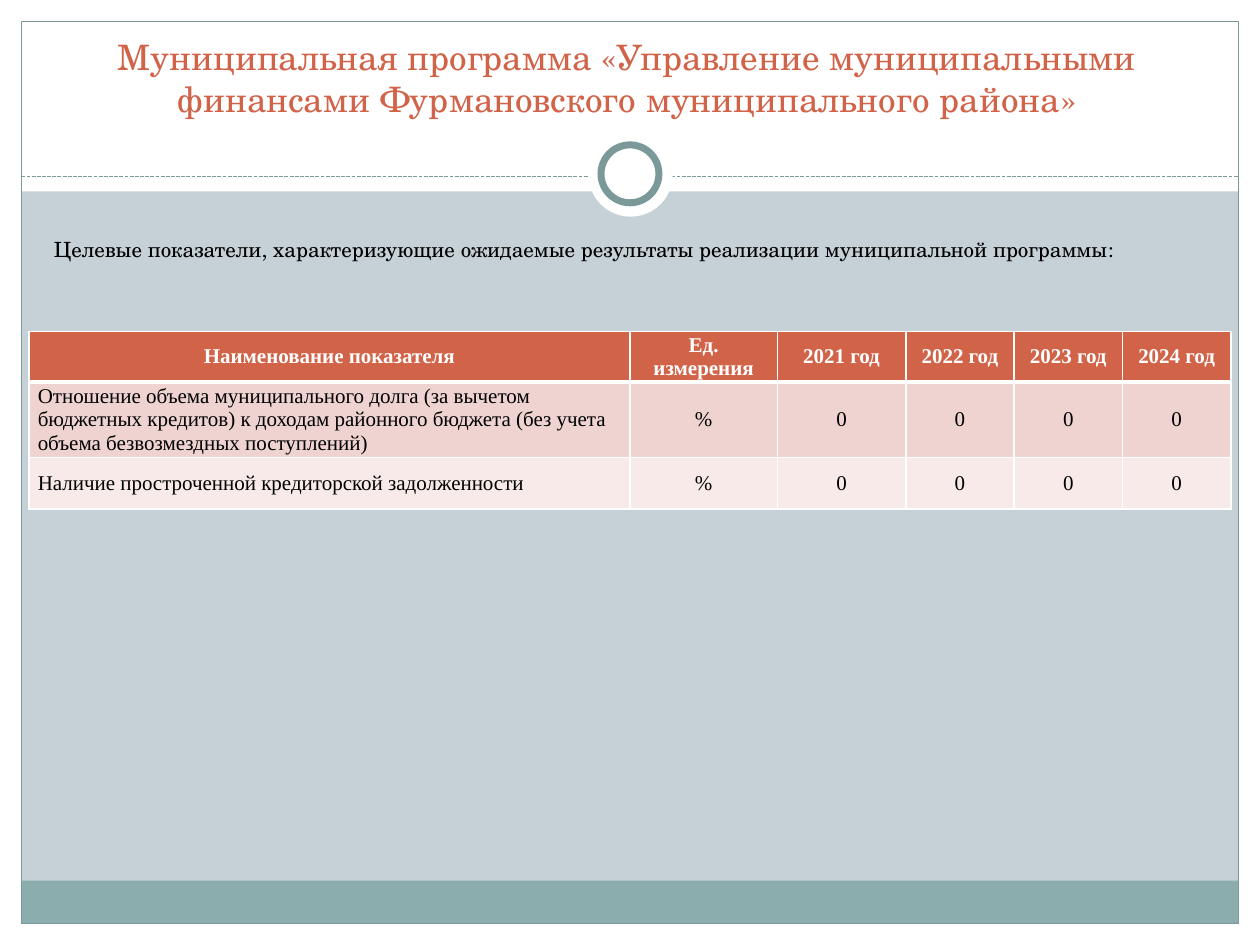
from dataclasses import dataclass
from typing import Optional

from lxml import etree
from pptx import Presentation
from pptx.dml.color import RGBColor
from pptx.enum.dml import MSO_LINE
from pptx.enum.shapes import MSO_CONNECTOR, MSO_SHAPE
from pptx.enum.text import MSO_ANCHOR, MSO_AUTO_SIZE, PP_ALIGN
from pptx.oxml.ns import qn
from pptx.util import Inches, Pt

RECTANGLE, OVAL = MSO_SHAPE.RECTANGLE, MSO_SHAPE.OVAL
STRAIGHT = MSO_CONNECTOR.STRAIGHT
DASHED = MSO_LINE.SQUARE_DOT
LEFT, CENTER = PP_ALIGN.LEFT, PP_ALIGN.CENTER
MIDDLE, BOTTOM = MSO_ANCHOR.MIDDLE, MSO_ANCHOR.BOTTOM
NO_AUTOFIT = MSO_AUTO_SIZE.NONE


@dataclass(frozen=True)
class Theme:
    background: str = "C5D1D7"
    white: str = "FFFFFF"
    black: str = "000000"
    accent: str = "D16349"
    frame: str = "7C999A"
    footer: str = "8CADAE"
    row_fills: tuple = ("EED3D0", "F7EAE9")
    heading_font: str = "TeX Gyre Schola"
    table_font: str = "Times New Roman"
    title_size: int = 20
    text_size: int = 12


@dataclass(frozen=True)
class Panel:
    left: float
    top: float
    width: float
    height: float
    fill: Optional[str] = None
    line: Optional[str] = None
    line_width: float = 0.75
    outline: MSO_SHAPE = RECTANGLE


@dataclass(frozen=True)
class Indicator:
    name: str
    unit: str
    values: tuple


THEME = Theme()
MARGIN = 0.17
FRAME_WIDTH = 10 - 2 * MARGIN

PANELS = (
    Panel(0, 7.5 - MARGIN, 10, MARGIN, THEME.white),
    Panel(0, 0, 10, 1.52, THEME.white),
    Panel(0, 0, MARGIN, 7.5, THEME.white),
    Panel(10 - MARGIN, 0, MARGIN, 7.5, THEME.white),
    Panel(MARGIN, 6.99, FRAME_WIDTH, 0.34, THEME.footer),
    Panel(MARGIN, MARGIN, FRAME_WIDTH, 7.5 - 2 * MARGIN, line=THEME.frame),
)
MEDALLION = (
    Panel(4.67, 1.05, 0.67, 0.67, THEME.white, outline=OVAL),
    Panel(4.77, 1.15, 0.46, 0.46, THEME.white, THEME.frame, 4, OVAL),
)

TITLE = ("Муниципальная программа «Управление муниципальными финансами "
         "Фурмановского муниципального района»")
INTRO = ("Целевые показатели, характеризующие ожидаемые результаты "
         "реализации муниципальной программы:")
YEARS = range(2021, 2025)
HEADER = ("Наименование показателя", "Ед. измерения",
          *(f"{year} год" for year in YEARS))
INDICATORS = (
    Indicator("Отношение объема муниципального долга (за вычетом бюджетных "
              "кредитов) к доходам районного бюджета (без учета объема "
              "безвозмездных поступлений)", "%", ("0",) * len(YEARS)),
    Indicator("Наличие простроченной кредиторской задолженности", "%",
              ("0",) * len(YEARS)),
)
COLUMN_WIDTHS = (4.77, 1.17, 1.02, 0.86, 0.86, 0.86)
ROW_HEIGHTS = (0.31, 0.41, 0.41)


def rgb(color: str) -> RGBColor:
    return RGBColor.from_string(color)


def draw_panel(slide, panel: Panel) -> None:
    shape = slide.shapes.add_shape(
        panel.outline, Inches(panel.left), Inches(panel.top),
        Inches(panel.width), Inches(panel.height))
    shape.shadow.inherit = False
    if panel.fill:
        shape.fill.solid()
        shape.fill.fore_color.rgb = rgb(panel.fill)
    else:
        shape.fill.background()
    if panel.line:
        shape.line.color.rgb = rgb(panel.line)
        shape.line.width = Pt(panel.line_width)
    else:
        shape.line.fill.background()


def draw_divider(slide, y: float) -> None:
    divider = slide.shapes.add_connector(
        STRAIGHT, Inches(MARGIN), Inches(y), Inches(10 - MARGIN), Inches(y))
    divider.line.color.rgb = rgb(THEME.frame)
    divider.line.width = Pt(0.75)
    divider.line.dash_style = DASHED
    etree.SubElement(divider.element.spPr, qn("a:effectLst"))


def write(frame, text: str, font_name: str, size: int, color: str,
          align: PP_ALIGN, bold: bool = False):
    frame.text = text
    frame.word_wrap = True
    paragraph = frame.paragraphs[0]
    paragraph.alignment = align
    font = paragraph.runs[0].font
    font.name, font.size, font.bold = font_name, Pt(size), bold
    font.color.rgb = rgb(color)
    return paragraph


def draw_title(slide) -> None:
    title = slide.shapes.title
    title.left, title.top = Inches(0.31), Inches(0.47)
    title.width, title.height = Inches(9.33), Inches(0.53)
    title.text_frame.auto_size = NO_AUTOFIT
    title.text_frame.vertical_anchor = BOTTOM
    write(title.text_frame, TITLE, THEME.heading_font, THEME.title_size,
          THEME.accent, CENTER)
    title.element.getparent().append(title.element)


def draw_intro(slide) -> None:
    intro = slide.shapes.add_textbox(
        Inches(0.33), Inches(1.59), Inches(9.3), Inches(0.67))
    intro.text_frame.vertical_anchor = MIDDLE
    intro.text_frame.margin_top = Inches(0.16)
    write(intro.text_frame, INTRO, THEME.heading_font, THEME.text_size,
          THEME.black, LEFT)


def add_borders(cell, top: float, bottom: float) -> None:
    properties = cell._tc.get_or_add_tcPr()
    for side, width in (("L", 1), ("R", 1), ("T", top), ("B", bottom)):
        border = etree.SubElement(properties, qn(f"a:ln{side}"), w=str(Pt(width)))
        fill = etree.SubElement(border, qn("a:solidFill"))
        etree.SubElement(fill, qn("a:srgbClr"), val=THEME.white)


def draw_table(slide) -> None:
    rows = [HEADER] + [(item.name, item.unit, *item.values) for item in INDICATORS]
    table = slide.shapes.add_table(
        len(rows), len(HEADER), Inches(0.23), Inches(2.63),
        Inches(sum(COLUMN_WIDTHS)), Inches(sum(ROW_HEIGHTS))).table
    for column, width in zip(table.columns, COLUMN_WIDTHS):
        column.width = Inches(width)
    for row, height in zip(table.rows, ROW_HEIGHTS):
        row.height = Inches(height)
    fills = (THEME.accent, *THEME.row_fills)
    for r, texts in enumerate(rows):
        is_header = r == 0
        for c, text in enumerate(texts):
            cell = table.cell(r, c)
            add_borders(cell, 3 if r == 1 else 1, 3 if is_header else 1)
            cell.fill.solid()
            cell.fill.fore_color.rgb = rgb(fills[r])
            cell.vertical_anchor = MIDDLE
            cell.margin_left = cell.margin_right = Inches(0.07)
            cell.margin_top = cell.margin_bottom = 0
            paragraph = write(
                cell.text_frame, text, THEME.table_font, THEME.text_size,
                THEME.white if is_header else THEME.black,
                CENTER if is_header or c else LEFT, is_header)
            if not is_header:
                paragraph.space_after = Pt(2)


def main() -> None:
    deck = Presentation()
    deck.slide_width, deck.slide_height = Inches(10), Inches(7.5)
    slide = deck.slides.add_slide(deck.slide_layouts[5])
    slide.background.fill.solid()
    slide.background.fill.fore_color.rgb = rgb(THEME.background)
    for panel in PANELS:
        draw_panel(slide, panel)
    draw_divider(slide, 1.4)
    for panel in MEDALLION:
        draw_panel(slide, panel)
    draw_title(slide)
    draw_intro(slide)
    draw_table(slide)
    deck.save("out.pptx")


if __name__ == "__main__":
    main()
